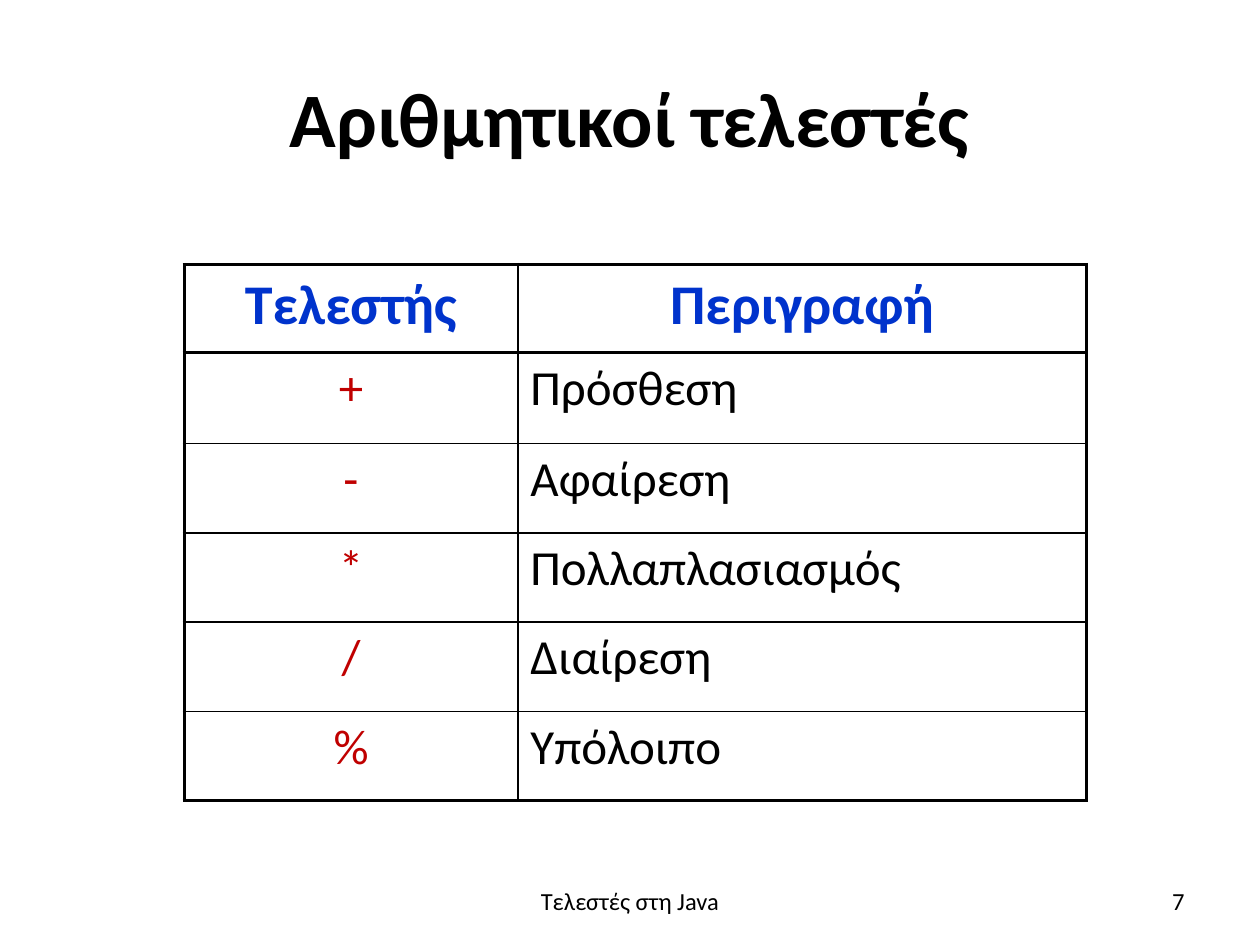
import pptx
import pptx.dml.color
import pptx.enum.text
import pptx.oxml.ns
import pptx.util
from lxml import etree
from pptx.util import Cm

FONT = "Calibri"
BLACK, BLUE, RED = "000000", "0033CC", "C00000"
ALIGN = pptx.enum.text.PP_ALIGN
MIDDLE = pptx.enum.text.MSO_ANCHOR.MIDDLE
OPERATORS = [
    ("+", "Πρόσθεση"),
    ("-", "Αφαίρεση"),
    ("*", "Πολλαπλασιασμός"),
    ("/", "∆ιαίρεση"),
    ("%", "Υπόλοιπο"),
]


def color(value):
    """Return the colour of a hex string."""
    return pptx.dml.color.RGBColor.from_string(value)


def write(frame, text, size, align, ink=BLACK, bold=False):
    """Write one formatted run into the first paragraph of a frame."""
    para = frame.paragraphs[0]
    para.alignment = align
    span = para.add_run()
    span.text = text
    span.font.name = FONT
    span.font.size = pptx.util.Pt(size)
    span.font.bold = bold
    span.font.color.rgb = color(ink)


def add_text(page, place, text, size, align, bold=False):
    """Add a vertically centred text box at a place given in centimetres."""
    box = page.shapes.add_textbox(*map(Cm, place))
    box.text_frame.word_wrap = True
    box.text_frame.vertical_anchor = MIDDLE
    write(box.text_frame, text, size, align, bold=bold)


def set_border(cell, side, points):
    """Draw a black line on one side (L, R, T or B) of a cell."""
    properties = cell._tc.get_or_add_tcPr()
    tag = pptx.oxml.ns.qn
    line = etree.SubElement(properties, tag(f"a:ln{side}"), w=str(pptx.util.Pt(points)))
    fill = etree.SubElement(line, tag("a:solidFill"))
    etree.SubElement(fill, tag("a:srgbClr"), val=BLACK)


def style_cell(cell, row, column, last_row):
    """Give a cell thick outer and header lines, thin inner lines and no fill."""
    thick = {"L": column == 0, "R": column == 1, "T": row <= 1, "B": row in (0, last_row)}
    for side, is_thick in thick.items():
        set_border(cell, side, 2 if is_thick else 1)
    cell.fill.background()


def add_operator_table(page):
    """Add the table of operators and their descriptions."""
    rows = [("Τελεστής", "Περιγραφή")] + OPERATORS
    widths = (6.73, 11.46)
    heights = [1.78, 1.83] + [1.8] * (len(rows) - 2)
    frame = page.shapes.add_table(
        len(rows), len(widths), Cm(3.71), Cm(5.33), Cm(sum(widths)), Cm(sum(heights))
    )
    table = frame.table
    table.first_row = True
    table.horz_banding = False
    for column, width in zip(table.columns, widths):
        column.width = Cm(width)
    for row, height in zip(table.rows, heights):
        row.height = Cm(height)
    for r, texts in enumerate(rows):
        for c, text in enumerate(texts):
            cell = table.cell(r, c)
            style_cell(cell, r, c, len(rows) - 1)
            if r == 0:
                write(cell.text_frame, text, 32, ALIGN.CENTER, BLUE, bold=True)
            elif c == 0:
                write(cell.text_frame, text, 28, ALIGN.CENTER, RED)
            else:
                write(cell.text_frame, text, 28, ALIGN.LEFT)


def main():
    """Build the slide and save it."""
    deck = pptx.Presentation()
    deck.slide_width, deck.slide_height = Cm(25.4), Cm(19.05)
    page = deck.slides.add_slide(deck.slide_layouts[6])
    add_text(page, (1.27, 0.76, 22.86, 3.18), "Αριθμητικοί τελεστές", 44, ALIGN.CENTER, bold=True)
    add_operator_table(page)
    add_text(page, (8.68, 17.66, 8.04, 1.01), "Τελεστές στη Java", 14, ALIGN.CENTER)
    add_text(page, (18.2, 17.66, 5.93, 1.01), "7", 14, ALIGN.RIGHT)
    deck.save("out.pptx")


if __name__ == "__main__":
    main()
